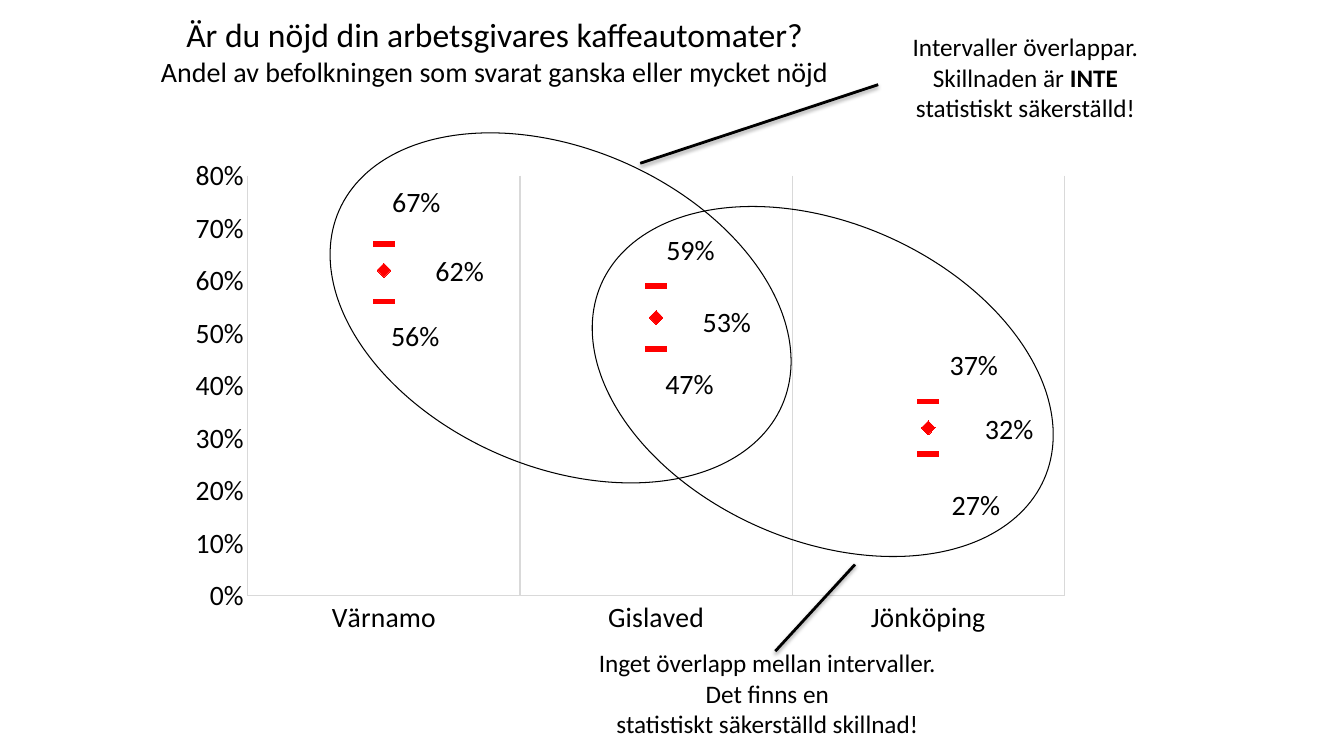
import pptx
import pptx.chart.data
import pptx.dml.color
import pptx.enum.chart
import pptx.enum.shapes
import pptx.enum.text
import pptx.oxml
import pptx.util

Inches = pptx.util.Inches
Pt = pptx.util.Pt
RGBColor = pptx.dml.color.RGBColor
Align = pptx.enum.text.PP_ALIGN
Anchor = pptx.enum.text.MSO_ANCHOR
Marker = pptx.enum.chart.XL_MARKER_STYLE

BLACK = RGBColor(0x00, 0x00, 0x00)
RED = RGBColor(0xFF, 0x00, 0x00)
GRAY = RGBColor(0xD9, 0xD9, 0xD9)
FONT = "Calibri"

deck = pptx.Presentation()
deck.slide_width = Inches(13.33)
deck.slide_height = Inches(7.5)
slide = deck.slides.add_slide(deck.slide_layouts[6])


def style(font, size):
    font.name = FONT
    font.size = Pt(size)
    font.color.rgb = BLACK


def write(box, text, size, anchor=Anchor.MIDDLE, align=Align.CENTER, wrap=True):
    left, top, width, height = map(Inches, box)
    frame = slide.shapes.add_textbox(left, top, width, height).text_frame
    frame.word_wrap = wrap
    frame.vertical_anchor = anchor
    para = frame.paragraphs[0]
    para.alignment = align
    para.text = text
    style(para.font, size)
    return frame


title = write((-1.16, -0.23, 12.13, 1.1), "Är du nöjd din arbetsgivares kaffeautomater?\n"
              "Andel av befolkningen som svarat ganska eller mycket nöjd", 20, Anchor.BOTTOM)
title.margin_left = title.margin_right = title.margin_top = title.margin_bottom = 0
title.paragraphs[0].runs[0].font.size = Pt(24)

data = pptx.chart.data.CategoryChartData(number_format="0%")
data.categories = ["Värnamo", "Gislaved", "Jönköping"]
data.add_series("Series 1", (0.62, 0.53, 0.32))
data.add_series("Series 2", (0.56, 0.47, 0.27))
data.add_series("Series 3", (0.67, 0.59, 0.37))
chart = slide.shapes.add_chart(
    pptx.enum.chart.XL_CHART_TYPE.LINE_MARKERS,
    Inches(1.94), Inches(1.07), Inches(9.13), Inches(5.43), data).chart
chart.has_legend = False
chart.has_title = False
style(chart.font, 20)

plot = chart.plots[0]
plot.vary_by_categories = False
marks = [(Marker.DIAMOND, 10), (Marker.DASH, 15), (Marker.DASH, 15)]
for series, (shape, size) in zip(plot.series, marks):
    series.smooth = False
    series.format.line.fill.background()
    series.marker.style = shape
    series.marker.size = size
    series.marker.format.fill.solid()
    series.marker.format.fill.fore_color.rgb = RED
    series.marker.format.line.fill.background()

places = chart.category_axis
values = chart.value_axis
for axis in (places, values):
    axis.major_tick_mark = axis.minor_tick_mark = pptx.enum.chart.XL_TICK_MARK.NONE
    style(axis.tick_labels.font, 20)
places.has_major_gridlines = True
for line in (places.format.line, places.major_gridlines.format.line):
    line.color.rgb = GRAY
    line.width = Pt(0.75)
values.has_major_gridlines = False
values.format.line.fill.background()
values.minimum_scale = 0
values.maximum_scale = 0.8
values.major_unit = 0.1
values.tick_labels.number_format = "0%"
values.tick_labels.number_format_is_linked = False

area = chart.plots[0]._element.getparent()
for old in area.findall(pptx.oxml.ns.qn("c:layout")):
    area.remove(old)
area.insert(0, pptx.oxml.parse_xml(
    '<c:layout xmlns:c="http://schemas.openxmlformats.org/drawingml/2006/chart">'
    '<c:manualLayout><c:layoutTarget val="inner"/>'
    '<c:xMode val="edge"/><c:yMode val="edge"/>'
    '<c:x val="0.043"/><c:y val="0.124"/><c:w val="0.9"/><c:h val="0.768"/>'
    '</c:manualLayout></c:layout>'))

for left, top in [(3.16, 1.48), (5.76, 2.21)]:
    ring = slide.shapes.add_shape(
        pptx.enum.shapes.MSO_SHAPE.OVAL,
        Inches(left), Inches(top), Inches(4.8), Inches(3.15))
    ring.rotation = 23.8
    ring.shadow.inherit = False
    ring.fill.background()
    ring.line.color.rgb = BLACK
    ring.line.width = Pt(0.75)

for ends in [(6.35, 1.62, 8.71, 0.84), (7.69, 6.46, 8.48, 5.6)]:
    link = slide.shapes.add_connector(
        pptx.enum.shapes.MSO_CONNECTOR.STRAIGHT, *map(Inches, ends))
    link.line.color.rgb = BLACK
    link.line.width = Pt(2)
    link._element.spPr.append(pptx.oxml.parse_xml(
        '<a:effectLst xmlns:a="http://schemas.openxmlformats.org/drawingml/2006/main">'
        '<a:outerShdw blurRad="39370" dist="20320" dir="5400000" rotWithShape="0">'
        '<a:srgbClr val="000000"><a:alpha val="38000"/></a:srgbClr>'
        '</a:outerShdw></a:effectLst>'))

note = write((8.83, 0.25, 2.68, 1.03), "Intervaller överlappar. Skillnaden är ", 18)
para = note.paragraphs[0]
for text, bold in [("INTE", True), (" statistiskt säkerställd!", False)]:
    run = para.add_run()
    run.text = text
    run.font.bold = bold

write((5.72, 6.36, 3.78, 1.03), "Inget överlapp mellan intervaller. Det finns en\n"
      "statistiskt säkerställd skillnad!", 18)

labels = [
    ("67%", 3.79, 1.78), ("62%", 4.22, 2.47), ("56%", 3.78, 3.11),
    ("59%", 6.51, 2.26), ("53%", 6.87, 2.97), ("47%", 6.5, 3.59),
    ("37%", 9.32, 3.4), ("32%", 9.67, 4.03), ("27%", 9.34, 4.79),
]
for text, left, top in labels:
    write((left, top, 0.71, 0.39), text, 20, Anchor.TOP, Align.LEFT, False)

deck.save("out.pptx")
